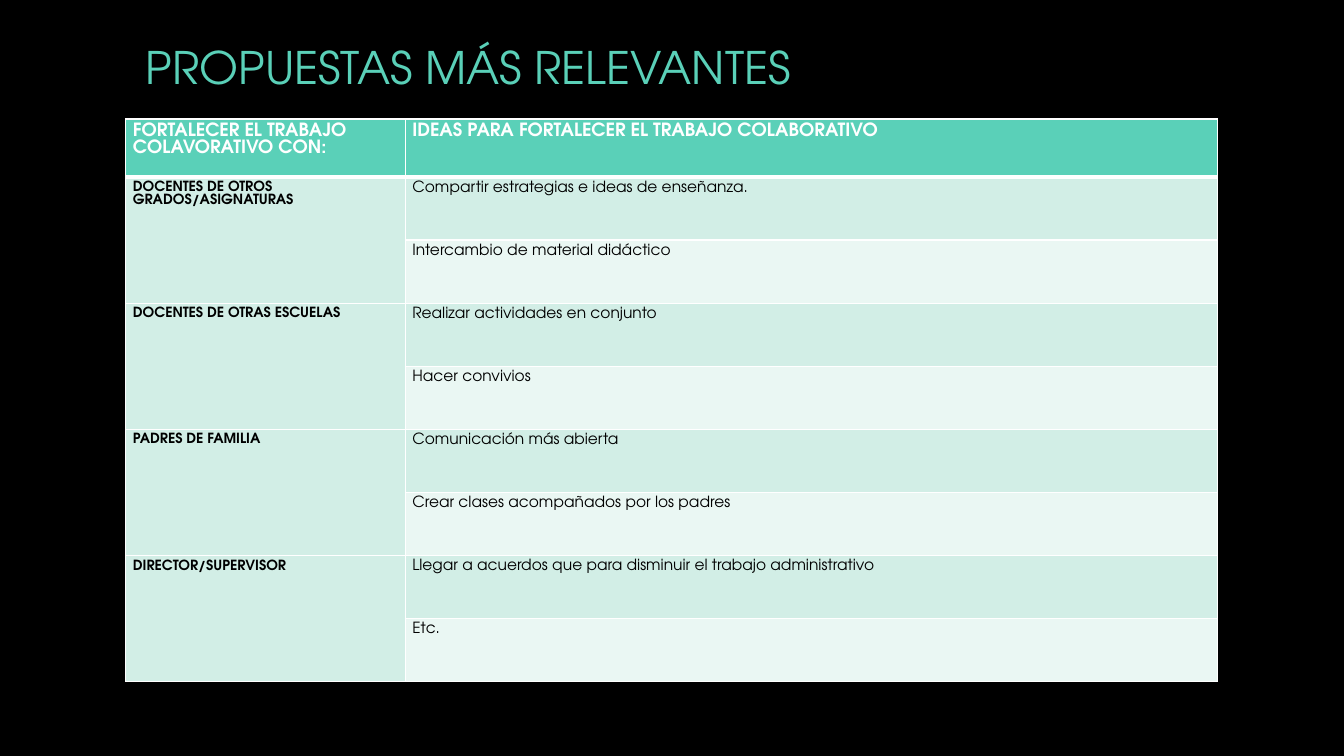
import dataclasses

import lxml.etree
import pptx
import pptx.dml.color
import pptx.enum.text
import pptx.oxml.ns
import pptx.presentation
import pptx.slide
import pptx.table
import pptx.text.text
import pptx.util

Cm = pptx.util.Cm
Pt = pptx.util.Pt


@dataclasses.dataclass(frozen=True)
class Theme:
    font: str = "TeX Gyre Adventor"
    back: str = "000000"
    teal: str = "5AD0B8"
    mint: str = "D2EEE6"
    pale: str = "EAF7F3"
    white: str = "FFFFFF"
    black: str = "000000"
    title: float = 32
    head: float = 13
    group: float = 10
    idea: float = 11
    pitch: float = 0.93
    thin: float = 1
    thick: float = 3


@dataclasses.dataclass(frozen=True)
class Group:
    name: str
    ideas: tuple[str, ...]


THEME = Theme()
TITLE = "PROPUESTAS MÁS RELEVANTES"
HEADS = (
    "FORTALECER EL TRABAJO COLAVORATIVO CON:",
    "IDEAS PARA FORTALECER EL TRABAJO COLABORATIVO",
)
GROUPS = (
    Group("DOCENTES DE OTROS GRADOS/ASIGNATURAS",
          ("Compartir estrategias e ideas de enseñanza.",
           "Intercambio de material didáctico")),
    Group("DOCENTES DE OTRAS ESCUELAS",
          ("Realizar actividades en conjunto", "Hacer convivios")),
    Group("PADRES DE FAMILIA",
          ("Comunicación más abierta",
           "Crear clases acompañados por los padres")),
    Group("DIRECTOR/SUPERVISOR",
          ("Llegar a acuerdos que para disminuir el trabajo administrativo",
           "Etc.")),
)
WIDTHS = (Cm(7.04), Cm(20.47))
HEAD_ROW = Cm(1.46)
IDEA_ROW = Cm(1.59)


def color(code: str) -> pptx.dml.color.RGBColor:
    return pptx.dml.color.RGBColor.from_string(code)


def write(frame: pptx.text.text.TextFrame, text: str, *, size: float,
          ink: str, bold: bool = False, pitch: float | None = None) -> None:
    """Set one paragraph; pitch is the line height as a share of the size."""
    frame.word_wrap = True
    para = frame.paragraphs[0]
    if pitch:
        para.line_spacing = Pt(round(size * pitch, 1))
    run = para.add_run()
    run.text = text
    run.font.name = THEME.font
    run.font.size = Pt(size)
    run.font.bold = bold
    run.font.color.rgb = color(ink)


def edge(cell: pptx.table._Cell, side: str, width: float) -> None:
    """Add a white border; side is L, R, T or B."""
    tag = pptx.oxml.ns.qn
    props = cell._tc.get_or_add_tcPr()
    line = lxml.etree.SubElement(props, tag(f"a:ln{side}"), w=str(Pt(width)))
    fill = lxml.etree.SubElement(line, tag("a:solidFill"))
    lxml.etree.SubElement(fill, tag("a:srgbClr"), val=THEME.white)


def dress(cell: pptx.table._Cell, fill: str, *, top: float = THEME.thin,
          base: float = THEME.thin) -> None:
    """Give a cell its insets, borders and fill."""
    cell.margin_left = cell.margin_right = Cm(0.18)
    cell.margin_top = cell.margin_bottom = Cm(0.1)
    sides = {"L": THEME.thin, "R": THEME.thin, "T": top, "B": base}
    for side, width in sides.items():
        edge(cell, side, width)
    cell.fill.solid()
    cell.fill.fore_color.rgb = color(fill)


def draw_title(slide: pptx.slide.Slide) -> None:
    box = slide.shapes.add_textbox(Cm(3.43), Cm(0.84), Cm(27.51), Cm(1.7))
    box.text_frame.vertical_anchor = pptx.enum.text.MSO_ANCHOR.MIDDLE
    write(box.text_frame, TITLE, size=THEME.title, ink=THEME.teal)


def draw_table(slide: pptx.slide.Slide) -> None:
    count = sum(len(group.ideas) for group in GROUPS)
    table = slide.shapes.add_table(
        count + 1, len(WIDTHS), Cm(3.17), Cm(3), sum(WIDTHS),
        HEAD_ROW + count * IDEA_ROW).table
    for col, width in zip(table.columns, WIDTHS):
        col.width = width
    for index, row in enumerate(table.rows):
        row.height = IDEA_ROW if index else HEAD_ROW

    for index, head in enumerate(HEADS):
        cell = table.cell(0, index)
        dress(cell, THEME.teal, base=THEME.thick)
        write(cell.text_frame, head, size=THEME.head, ink=THEME.white,
              bold=True, pitch=THEME.pitch)

    first = 1
    for group in GROUPS:
        for step, idea in enumerate(group.ideas):
            row = first + step
            top = THEME.thick if row == 1 else THEME.thin
            dress(table.cell(row, 0), THEME.mint, top=top)
            cell = table.cell(row, 1)
            dress(cell, THEME.pale if step % 2 else THEME.mint, top=top)
            write(cell.text_frame, idea, size=THEME.idea, ink=THEME.black,
                  pitch=THEME.pitch)
        name = table.cell(first, 0)
        name.merge(table.cell(first + len(group.ideas) - 1, 0))
        write(name.text_frame, group.name, size=THEME.group,
              ink=THEME.black, bold=True, pitch=THEME.pitch)
        first += len(group.ideas)


def main() -> None:
    deck = pptx.Presentation()
    deck.slide_width = Cm(33.87)
    deck.slide_height = Cm(19.05)
    slide = deck.slides.add_slide(deck.slide_layouts[6])
    slide.background.fill.solid()
    slide.background.fill.fore_color.rgb = color(THEME.back)
    draw_title(slide)
    draw_table(slide)
    deck.save("out.pptx")


if __name__ == "__main__":
    main()
